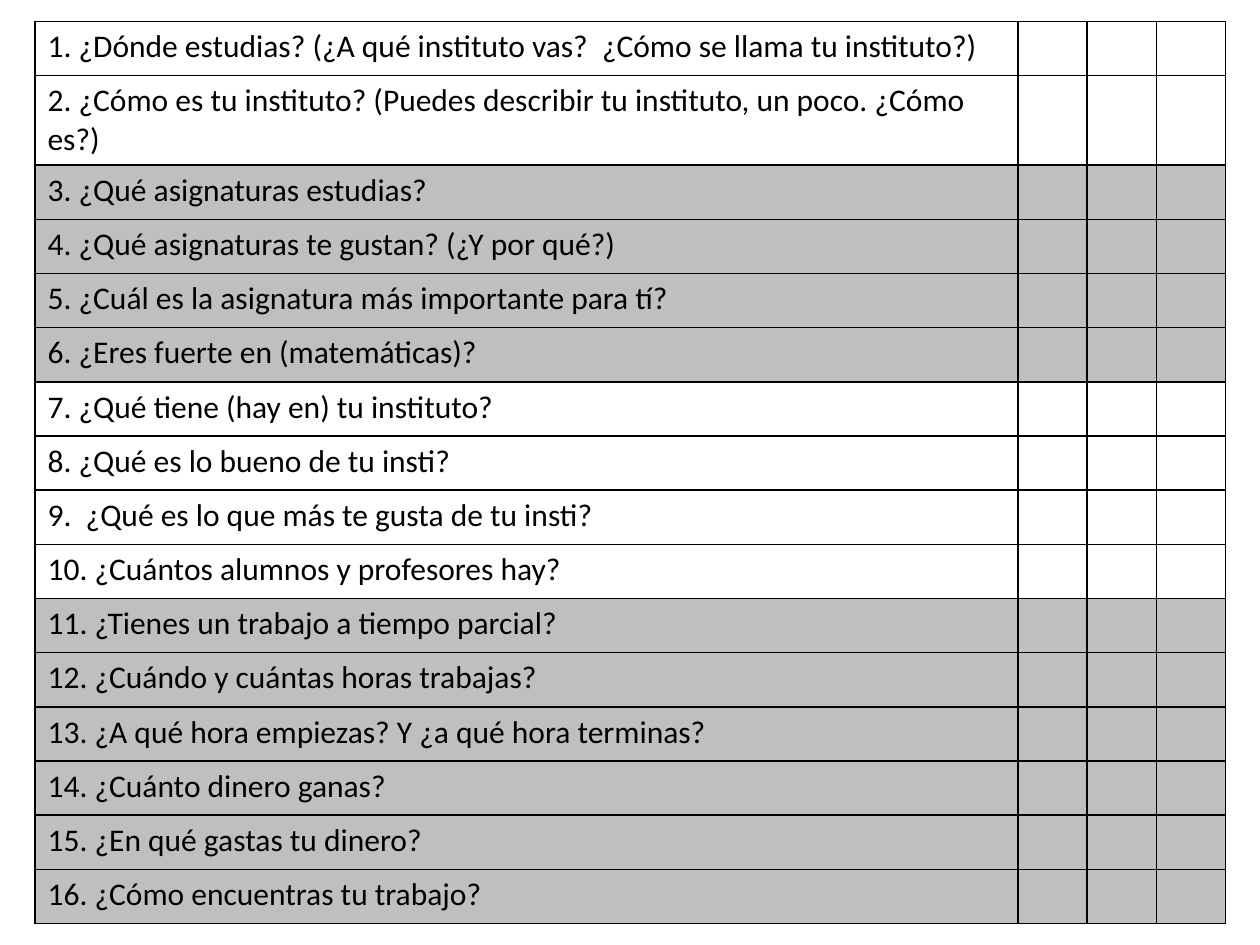
from lxml import etree
from pptx import Presentation
from pptx.dml.color import RGBColor
from pptx.oxml.ns import qn
from pptx.util import Pt

BLACK = RGBColor(0x00, 0x00, 0x00)
GRAY = RGBColor(0xBF, 0xBF, 0xBF)
FONT = "Calibri"
BLANK_LAYOUT = 6

QUESTION_WIDTH = 561.6
TICK_WIDTH = 39.6
TICK_COLUMNS = 3
ROW_HEIGHT = 30.96

QUESTION_GROUPS = [
    (None, [
        "1. ¿Dónde estudias? (¿A qué instituto vas?  ¿Cómo se llama tu instituto?)",
        "2. ¿Cómo es tu instituto? (Puedes describir tu instituto, un poco. ¿Cómo es?)",
    ]),
    (GRAY, [
        "3. ¿Qué asignaturas estudias?",
        "4. ¿Qué asignaturas te gustan? (¿Y por qué?)",
        "5. ¿Cuál es la asignatura más importante para tí?",
        "6. ¿Eres fuerte en (matemáticas)?",
    ]),
    (None, [
        "7. ¿Qué tiene (hay en) tu instituto?",
        "8. ¿Qué es lo bueno de tu insti?",
        "9.  ¿Qué es lo que más te gusta de tu insti?",
        "10. ¿Cuántos alumnos y profesores hay?",
    ]),
    (GRAY, [
        "11. ¿Tienes un trabajo a tiempo parcial?",
        "12. ¿Cuándo y cuántas horas trabajas?",
        "13. ¿A qué hora empiezas? Y ¿a qué hora terminas?",
        "14. ¿Cuánto dinero ganas?",
        "15. ¿En qué gastas tu dinero?",
        "16. ¿Cómo encuentras tu trabajo?",
    ]),
]


def write_text(tf, text, size=18, font=FONT, color=BLACK):
    r = tf.paragraphs[0].add_run()
    r.text = text
    r.font.size = Pt(size)
    r.font.name = font
    r.font.color.rgb = color


def set_borders(cell, color=BLACK, width=1):
    tc_pr = cell._tc.get_or_add_tcPr()
    for side in ("a:lnL", "a:lnR", "a:lnT", "a:lnB"):
        ln = etree.SubElement(tc_pr, qn(side), w=str(Pt(width)))
        fill = etree.SubElement(ln, qn("a:solidFill"))
        etree.SubElement(fill, qn("a:srgbClr"), val=str(color))


def set_fill(cell, color):
    if color is None:
        cell.fill.background()
    else:
        cell.fill.solid()
        cell.fill.fore_color.rgb = color


def add_question_table(s, left, top):
    rows = [(text, color) for color, texts in QUESTION_GROUPS for text in texts]
    widths = [QUESTION_WIDTH] + [TICK_WIDTH] * TICK_COLUMNS
    table = s.shapes.add_table(
        len(rows), len(widths), Pt(left), Pt(top),
        Pt(sum(widths)), Pt(ROW_HEIGHT * len(rows)),
    ).table
    table.first_row = False
    table.horz_banding = False
    for column, width in zip(table.columns, widths):
        column.width = Pt(width)
    for row, (text, color) in zip(table.rows, rows):
        row.height = Pt(ROW_HEIGHT)
        for cell in row.cells:
            set_borders(cell)
            set_fill(cell, color)
        write_text(row.cells[0].text_frame, text)


def main():
    prs = Presentation()
    prs.slide_width, prs.slide_height = Pt(720), Pt(540)
    s = prs.slides.add_slide(prs.slide_layouts[BLANK_LAYOUT])
    add_question_table(s, left=20, top=12.25)
    prs.save("out.pptx")


if __name__ == "__main__":
    main()
